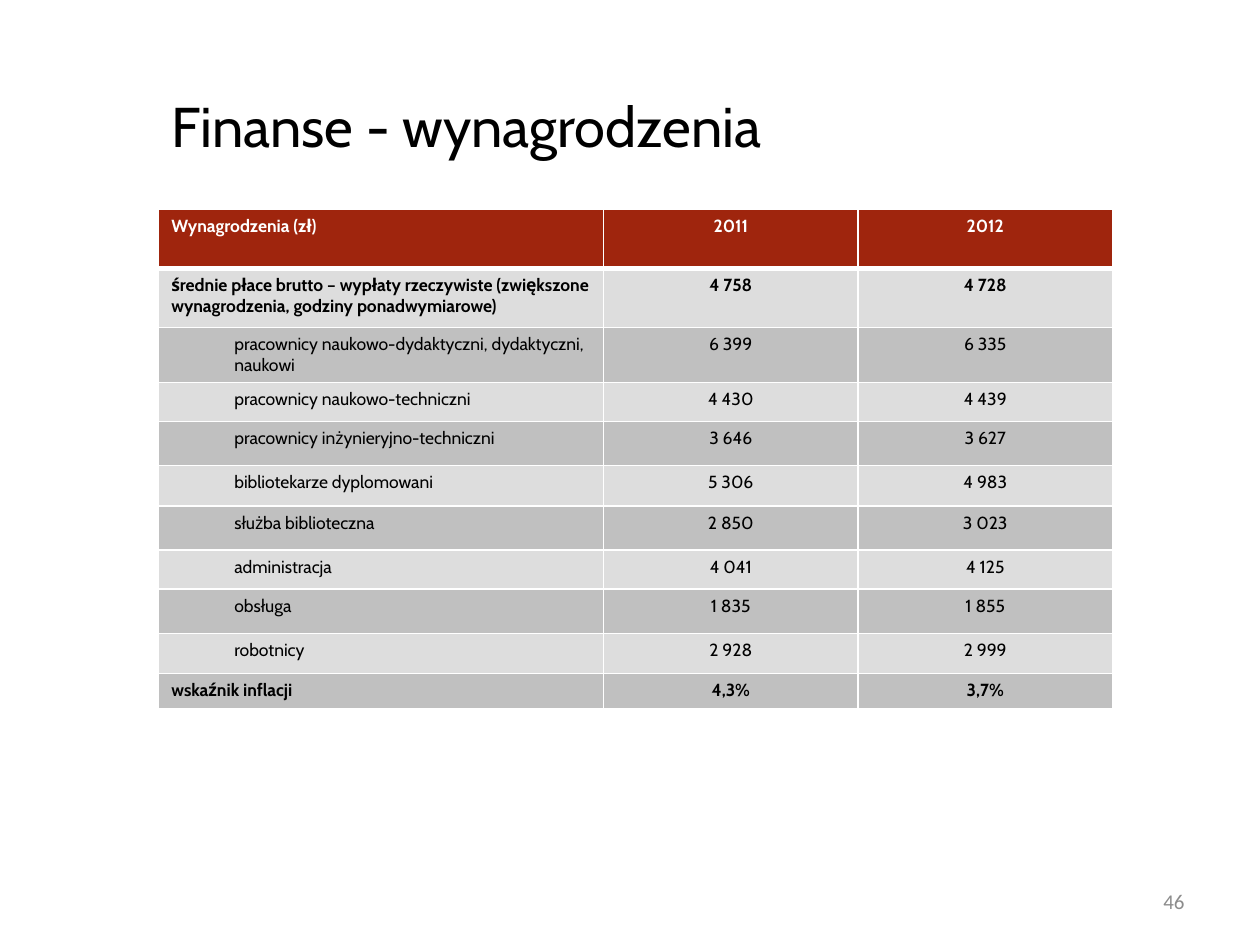
import pptx
import pptx.util
import pptx.dml.color
import pptx.enum.text
import pptx.oxml
import pptx.oxml.ns

Inches, Pt = pptx.util.Inches, pptx.util.Pt
PP_ALIGN = pptx.enum.text.PP_ALIGN
MSO_ANCHOR = pptx.enum.text.MSO_ANCHOR

TITLE = "Finanse - wynagrodzenia"
PAGE = "46"
HEADER = ("Wynagrodzenia (zł)", "2011", "2012")
AVERAGE = ("średnie płace brutto – wypłaty rzeczywiste (zwiększone "
           "wynagrodzenia, godziny ponadwymiarowe)", "4 758", "4 728")
GROUPS = [
    ("pracownicy naukowo-dydaktyczni, dydaktyczni, naukowi", "6 399", "6 335"),
    ("pracownicy naukowo-techniczni", "4 430", "4 439"),
    ("pracownicy inżynieryjno-techniczni", "3 646", "3 627"),
    ("bibliotekarze dyplomowani", "5 306", "4 983"),
    ("służba biblioteczna", "2 850", "3 023"),
    ("administracja", "4 041", "4 125"),
    ("obsługa", "1 835", "1 855"),
    ("robotnicy", "2 928", "2 999"),
]
INFLATION = ("wskaźnik inflacji", "4,3%", "3,7%")
ROWS = [HEADER, AVERAGE, *GROUPS, INFLATION]

COL_WIDTHS = (3.53, 2.02, 2.02)
ROW_HEIGHTS = (0.47, 0.47, 0.43, 0.31, 0.35, 0.32, 0.35, 0.31, 0.35, 0.32, 0.28)
LEFT = 1.26

THEME = {
    "font": "Cabin", "page_font": "Calibri",
    "title_size": 32, "cell_size": 10, "page_size": 12,
    "text": "000000", "header_text": "FFFFFF", "page": "8C8C8C",
    "header": "9F250D", "bands": ("C0C0C0", "DDDDDD"), "border": "FFFFFF",
}


def rgb(name):
    return pptx.dml.color.RGBColor.from_string(name)


def style(p, font, size, color, bold=False, align=PP_ALIGN.LEFT):
    p.alignment = align
    p.font.name, p.font.size, p.font.bold = font, Pt(size), bold
    p.font.color.rgb = rgb(color)


def set_borders(cell, top, bottom):
    """Draw the cell's four edges; they must precede its fill in the XML."""
    tc_pr = cell._tc.get_or_add_tcPr()
    for i, (side, width) in enumerate((("L", 1), ("R", 1), ("T", top), ("B", bottom))):
        tc_pr.insert(i, pptx.oxml.parse_xml(
            f'<a:ln{side} {pptx.oxml.ns.nsdecls("a")} w="{Pt(width)}"><a:solidFill>'
            f'<a:srgbClr val="{THEME["border"]}"/></a:solidFill></a:ln{side}>'))


def add_title(s):
    title = s.shapes.title
    title.left, title.top = Inches(LEFT), Inches(0.6)
    title.width, title.height = Inches(8.24), Inches(0.79)
    tf = title.text_frame
    tf.text = TITLE
    tf.vertical_anchor = MSO_ANCHOR.MIDDLE
    style(tf.paragraphs[0], THEME["font"], THEME["title_size"], THEME["text"])


def add_pay_table(s):
    table = s.shapes.add_table(
        len(ROWS), len(HEADER), Inches(LEFT), Inches(1.66),
        Inches(sum(COL_WIDTHS)), Inches(sum(ROW_HEIGHTS))).table
    for column, width in zip(table.columns, COL_WIDTHS):
        column.width = Inches(width)
    for row, height in zip(table.rows, ROW_HEIGHTS):
        row.height = Inches(height)
    for r, values in enumerate(ROWS):
        is_header, is_group = values is HEADER, values in GROUPS
        for c, value in enumerate(values):
            cell = table.cell(r, c)
            cell.text = value
            cell.fill.solid()
            cell.fill.fore_color.rgb = rgb(
                THEME["header"] if is_header else THEME["bands"][r % 2])
            set_borders(cell, 3 if r == 1 else 1, 3 if is_header else 1)
            p = cell.text_frame.paragraphs[0]
            if is_group and c == 0:
                p.level = 1
                p._p.get_or_add_pPr().set("marL", str(Inches(0.5)))
            style(p, THEME["font"], THEME["cell_size"],
                  THEME["header_text" if is_header else "text"],
                  not is_group, PP_ALIGN.CENTER if c else PP_ALIGN.LEFT)


def add_page_number(s):
    box = s.shapes.add_textbox(Inches(7.17), Inches(6.95), Inches(2.33), Inches(0.4))
    tf = box.text_frame
    tf.word_wrap = True
    tf.vertical_anchor = MSO_ANCHOR.MIDDLE
    tf.text = PAGE
    style(tf.paragraphs[0], THEME["page_font"], THEME["page_size"],
          THEME["page"], align=PP_ALIGN.RIGHT)


def main():
    prs = pptx.Presentation()
    prs.slide_width, prs.slide_height = Inches(10), Inches(7.5)
    s = prs.slides.add_slide(prs.slide_layouts.get_by_name("Title Only"))
    add_title(s)
    add_pay_table(s)
    add_page_number(s)
    prs.save("out.pptx")


if __name__ == "__main__":
    main()
